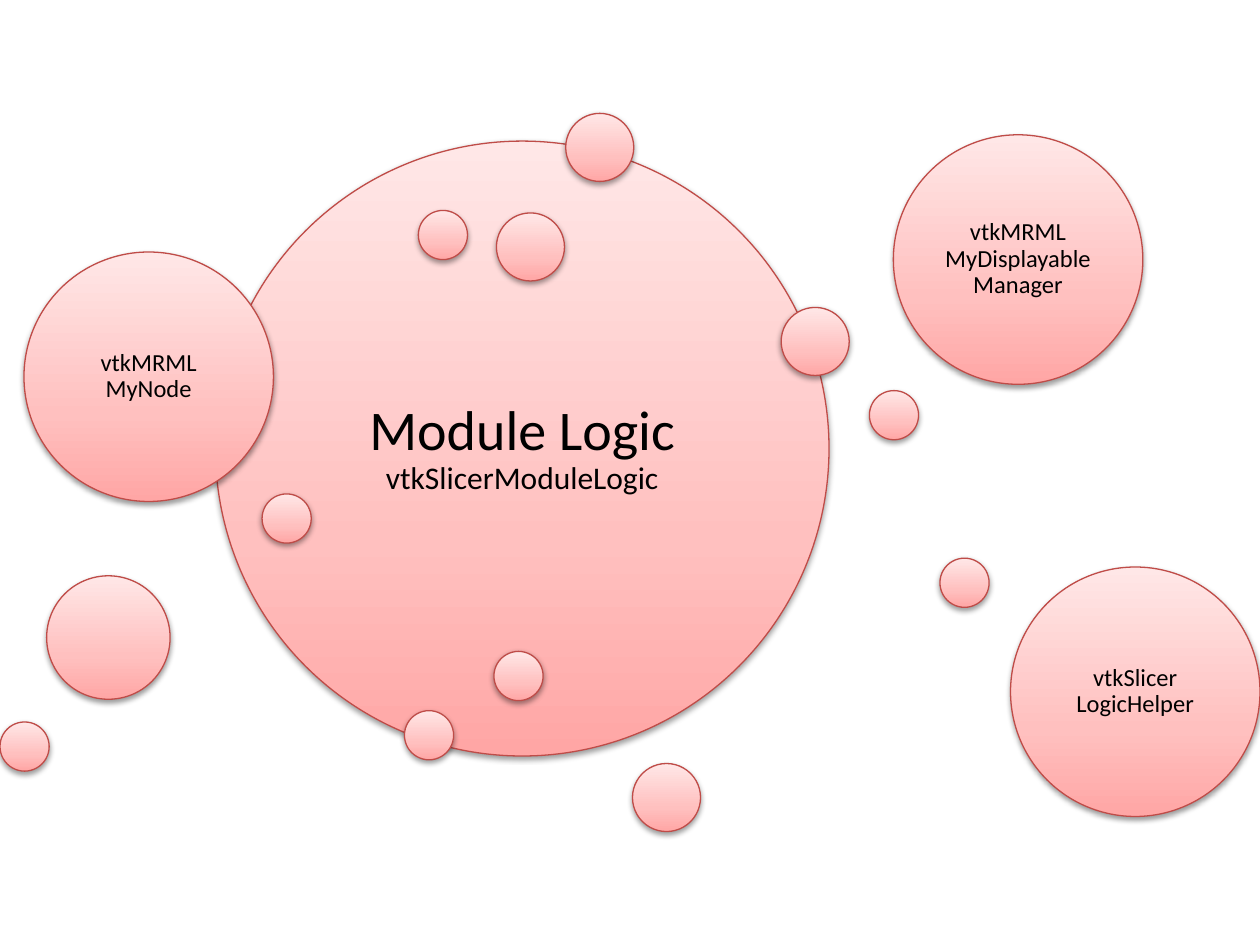
from copy import deepcopy

from lxml import etree
from pptx import Presentation
from pptx import util as u
from pptx.dml.color import RGBColor
from pptx.enum import shapes, text
from pptx.oxml.ns import qn

LARGE, MEDIUM, SMALL, TINY = 1.98, 0.98, 0.54, 0.39


def color(value):
    """Turn a hex string into a colour."""
    return RGBColor.from_string(value)


def apply(target, values):
    """Set attributes from a dict of format values."""
    for name, value in values.items():
        setattr(target, name, value)


class BubblePage:
    """Hold the style and the group of bubbles on the current slide."""

    stops = ((0, "FFA6A5"), (0.35, "FFC0BF"), (1, "FFE7E7"))
    outline = "BF4C48"
    font = "Calibri"

    def __init__(self, deck):
        """Add a blank page with one group for the bubbles."""
        self.page = deck.slides.add_slide(deck.slide_layouts[6])
        self.group = self.page.shapes.add_group_shape()

    def bubble(self, left, top, width, height=None):
        """Draw a shaded circle with a soft shadow."""
        circle = self.group.shapes.add_shape(
            shapes.MSO_SHAPE.OVAL,
            *map(u.Inches, (left, top, width, height or width)))
        circle.fill.gradient()
        circle.fill.gradient_angle = 90
        stop_list = circle._element.spPr.find(qn("a:gradFill")).find(qn("a:gsLst"))
        stop_list.append(deepcopy(stop_list[-1]))
        for stop, (position, shade) in zip(circle.fill.gradient_stops, self.stops):
            stop.position = position
            stop.color.rgb = color(shade)
        circle.line.color.rgb = color(self.outline)
        circle.line.width = u.Pt(0.75)
        self.shadow(circle)

    def shadow(self, shape):
        """Give a shape a soft shadow just below it."""
        shape.shadow.inherit = False
        effects = shape._element.spPr.find(qn("a:effectLst"))
        outer = etree.SubElement(effects, qn("a:outerShdw"), blurRad="40000",
                                 dist="20000", dir="5400000", rotWithShape="0")
        shade = etree.SubElement(outer, qn("a:srgbClr"), val="000000")
        etree.SubElement(shade, qn("a:alpha"), val="38000")

    def label(self, left, top, side, inset, lines):
        """Write centred lines of (wording, size) in a square box."""
        box = self.group.shapes.add_textbox(
            *map(u.Inches, (left, top, side, side)))
        frame = box.text_frame
        apply(frame, {"word_wrap": True, "vertical_anchor": text.MSO_ANCHOR.MIDDLE})
        apply(frame, {f"margin_{edge}": u.Inches(inset)
                      for edge in ("left", "top", "right", "bottom")})
        para = frame.paragraphs[0]
        apply(para, {"alignment": text.PP_ALIGN.CENTER, "line_spacing": 0.9})
        for index, (wording, size) in enumerate(lines):
            if index:
                para.add_line_break()
                etree.SubElement(para._p[-1], qn("a:rPr"), sz=str(size * 100))
            span = para.add_run()
            span.text = wording
            apply(span.font, {"name": self.font, "size": u.Pt(size)})
            span.font.color.rgb = color("000000")

    def class_bubble(self, left, top, *names):
        """Draw a large bubble that names a class."""
        self.bubble(left, top, LARGE)
        self.label(left + 0.29, top + 0.29, 1.4, 0.06,
                   [(name, 14) for name in names])

    def bubbles(self, width, *corners):
        """Draw plain bubbles of one size."""
        for left, top in corners:
            self.bubble(left, top, width)


def main():
    """Build the slide and save it."""
    deck = Presentation()
    apply(deck, {"slide_width": u.Inches(10), "slide_height": u.Inches(7.5)})
    page = BubblePage(deck)
    page.bubble(1.71, 1.12, 4.87, 4.88)
    page.label(2.42, 1.84, 3.45, 0.13,
               [("Module Logic", 32), ("vtkSlicerModuleLogic", 18)])
    page.class_bubble(0.19, 2, "vtkMRML", "MyNode")
    page.class_bubble(7.09, 1.07, "vtkMRML", "MyDisplayableManager")
    page.class_bubble(8.02, 4.5, "vtkSlicer", "LogicHelper")
    page.bubbles(MEDIUM, (0.37, 4.57))
    page.bubbles(SMALL, (4.49, 0.9), (5.02, 6.06), (3.94, 1.69), (6.2, 2.44))
    page.bubbles(TINY, (3.21, 5.64), (6.9, 3.1), (3.32, 1.67), (2.08, 3.92),
                 (0, 5.73), (3.92, 5.17), (7.46, 4.43))
    deck.save("out.pptx")


if __name__ == "__main__":
    main()
